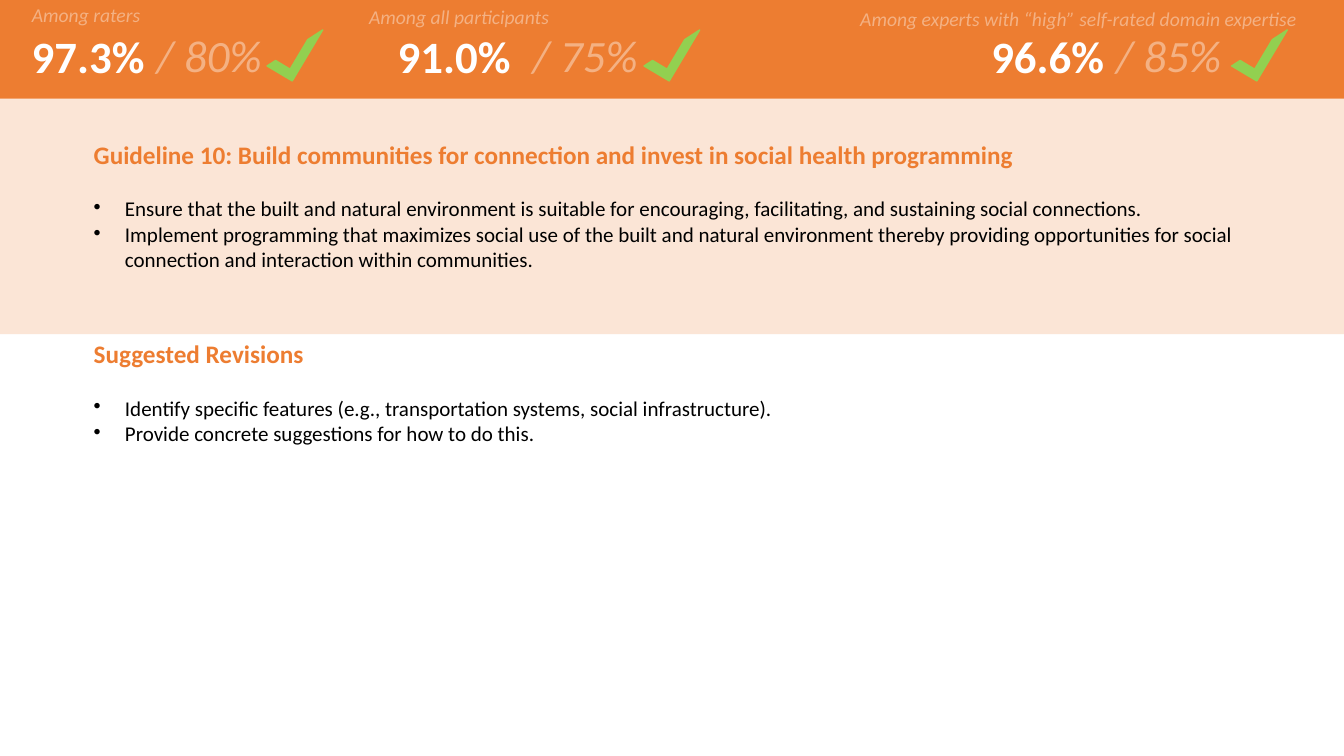
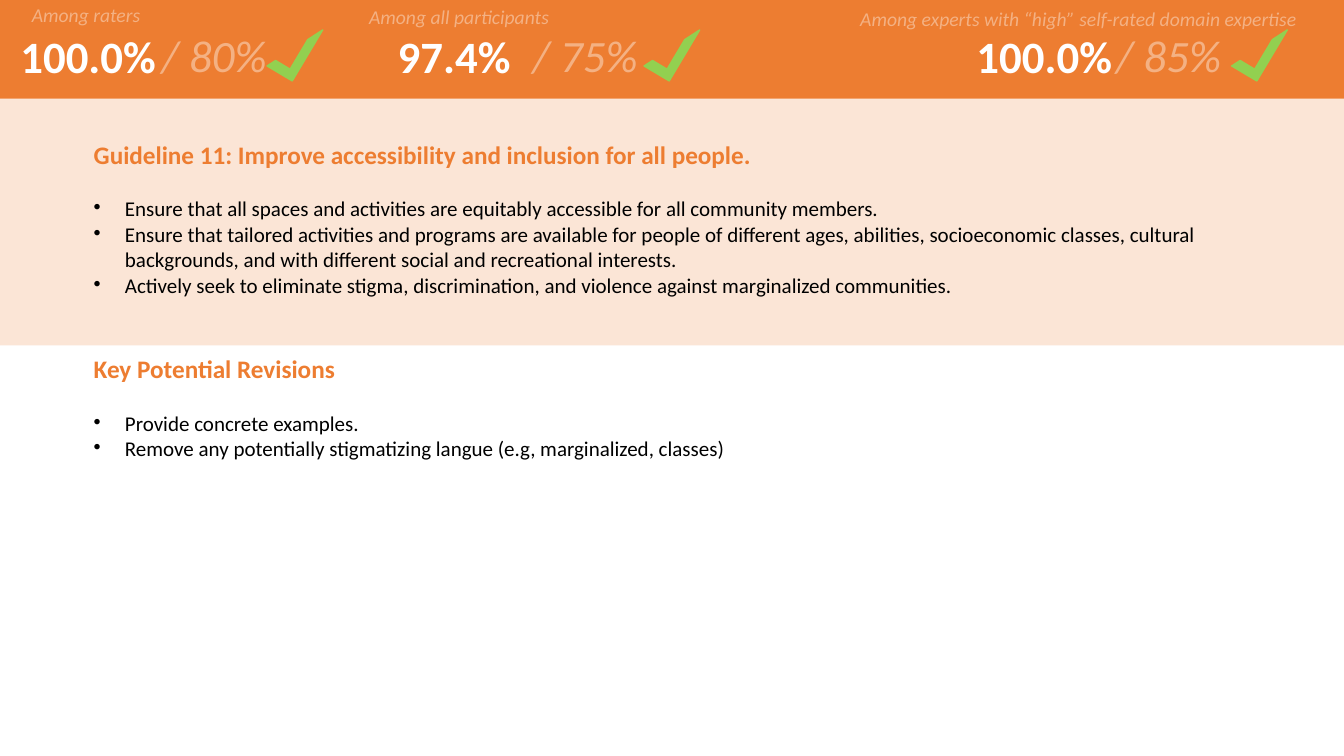
from lxml import etree
from pptx import Presentation
from pptx import util as u
from pptx.dml import color
from pptx.enum import shapes, text
from pptx.oxml import ns

COLORS = {
    "orange": "ED7D31",
    "peach": "FBE5D6",
    "apricot": "F4B183",
    "green": "92D050",
    "white": "FFFFFF",
    "black": "000000",
}

BAND_HEIGHT = 13.07
PANEL_TOP = 13

MEASURES = [
    {"label": "Among raters", "center": 6.41, "top": -0.27, "width": 9.7,
     "target": "/ 80%", "check": 21.94},
    {"label": "Among all participants", "center": 34.16, "top": 0, "width": 15.1,
     "target": "/ 75%", "check": 49.99},
    {"label": "Among experts with “high” self-rated domain expertise",
     "center": 80.25, "top": 0.27, "width": 35.1,
     "target": "/ 85%", "check": 93.71},
]

GUIDELINES = [
    {
        "heading": "Guideline 10: Build communities for connection and invest in "
                   "social health programming",
        "actions": [
            "Ensure that the built and natural environment is suitable for encouraging, "
            "facilitating, and sustaining social connections.",
            "Implement programming that maximizes social use of the built and natural "
            "environment thereby providing opportunities for social connection and "
            "interaction within communities.",
        ],
        "revision_heading": "Suggested Revisions",
        "revisions": [
            "Identify specific features (e.g., transportation systems, social infrastructure).",
            "Provide concrete suggestions for how to do this.",
        ],
        "scores": ["97.3%", "91.0%", "96.6%"],
        "score_centers": [6.56, 33.79, 77.96],
        "target_centers": [15.56, 43.54, 86.96],
        "panel_height": 31.2,
        "revision_top": 44.8,
    },
    {
        "heading": "Guideline 11: Improve accessibility and inclusion for all people.",
        "actions": [
            "Ensure that all spaces and activities are equitably accessible for all "
            "community members.",
            "Ensure that tailored activities and programs are available for people of "
            "different ages, abilities, socioeconomic classes, cultural backgrounds, and "
            "with different social and recreational interests.",
            "Actively seek to eliminate stigma, discrimination, and violence against "
            "marginalized communities.",
        ],
        "revision_heading": "Key Potential Revisions",
        "revisions": [
            "Provide concrete examples.",
            "Remove any potentially stigmatizing langue (e.g, marginalized, classes)",
        ],
        "scores": ["100.0%", "97.4%", "100.0%"],
        "score_centers": [6.56, 33.79, 77.7],
        "target_centers": [15.94, 43.54, 86.96],
        "panel_height": 32.7,
        "revision_top": 46.8,
    },
]


class Deck:
    """Hold the shared style and current slide; lengths are percent of the slide size."""

    font = "Calibri"

    def __init__(self):
        self.presentation = Presentation()
        self.presentation.slide_width = u.Inches(13.33)
        self.presentation.slide_height = u.Inches(7.5)
        self.slide = None

    def add_slide(self):
        self.slide = self.presentation.slides.add_slide(self.presentation.slide_layouts[6])

    def area(self, left, top, width, height):
        across = self.presentation.slide_width / 100
        down = self.presentation.slide_height / 100
        return [u.Emu(round(length)) for length in
                (left * across, top * down, width * across, height * down)]

    def paint(self, fill, name):
        fill.solid()
        fill.fore_color.rgb = color.RGBColor.from_string(COLORS[name])

    def run(self, paragraph, words, size, name, bold=False, italic=False):
        run = paragraph.add_run()
        run.text = words
        font = run.font
        font.name, font.size, font.bold, font.italic = self.font, u.Pt(size), bold, italic
        self.paint(font.fill, name)

    def band(self, top, height, name):
        shape = self.slide.shapes.add_shape(
            shapes.MSO_SHAPE.RECTANGLE, *self.area(0, top, 100, height))
        shape.shadow.inherit = False
        self.paint(shape.fill, name)
        shape.line.fill.background()

    def check(self, center):
        width = 2.18
        shape = self.slide.shapes.add_shape(
            shapes.MSO_SHAPE.HALF_FRAME, *self.area(center - width / 2, 2.4, width, 7.87))
        shape.adjustments[0], shape.adjustments[1] = 0.31, 0.27
        shape.rotation = 210.8
        shape.shadow.inherit = False
        self.paint(shape.fill, "green")
        self.paint(shape.line.fill, "green")
        shape.line.width = u.Pt(1)

    def caption(self, words, center, top, width, height, size, name, **style):
        shape = self.slide.shapes.add_textbox(
            *self.area(center - width / 2, top, width, height))
        frame = shape.text_frame
        frame.word_wrap = False
        frame.auto_size = text.MSO_AUTO_SIZE.SHAPE_TO_FIT_TEXT
        paragraph = frame.paragraphs[0]
        paragraph.alignment = text.PP_ALIGN.CENTER
        self.run(paragraph, words, size, name, **style)

    def bullet(self, paragraph):
        properties = paragraph._p.get_or_add_pPr()
        indent = u.Inches(0.31)
        properties.set("marL", str(indent))
        properties.set("indent", str(-indent))
        etree.SubElement(properties, ns.qn("a:buChar")).set("char", "•")

    def clear_borders(self, cell):
        properties = cell._tc.get_or_add_tcPr()
        for side in ("L", "R", "T", "B"):
            border = etree.SubElement(properties, ns.qn(f"a:ln{side}"))
            etree.SubElement(border, ns.qn("a:noFill"))

    def points(self, heading, items, top, fill=None):
        table = self.slide.shapes.add_table(1, 1, *self.area(6.9, top, 86.25, 13.6)).table
        table.first_row = table.horz_banding = False
        cell = table.cell(0, 0)
        self.clear_borders(cell)
        if fill:
            self.paint(cell.fill, fill)
        else:
            cell.fill.background()
        cell.vertical_anchor = text.MSO_ANCHOR.MIDDLE
        cell.margin_left = cell.margin_right = u.Inches(0.01)
        cell.margin_top = cell.margin_bottom = u.Inches(0.01)
        paragraph = cell.text_frame.paragraphs[0]
        paragraph.space_after = u.Pt(18.3)
        self.run(paragraph, heading, 18, "orange", bold=True)
        for item in items:
            paragraph = cell.text_frame.add_paragraph()
            self.bullet(paragraph)
            self.run(paragraph, item, 15, "black")

    def measure(self, measure, score, score_center, target_center):
        self.caption(score, score_center, 3.2, 1.7 * len(score) + 2, 8.53,
                     32, "white", bold=True)
        self.caption(measure["label"], measure["center"], measure["top"],
                     measure["width"], 4.53, 14, "apricot", italic=True)
        self.caption(measure["target"], target_center, 3.07, 9.4, 8.53,
                     32, "apricot", italic=True)
        self.check(measure["check"])

    def guideline(self, guideline):
        self.add_slide()
        self.band(PANEL_TOP, guideline["panel_height"], "peach")
        self.points(guideline["heading"], guideline["actions"], 18.4, "peach")
        self.band(0, BAND_HEIGHT, "orange")
        for values in zip(MEASURES, guideline["scores"],
                          guideline["score_centers"], guideline["target_centers"]):
            self.measure(*values)
        self.points(guideline["revision_heading"], guideline["revisions"],
                    guideline["revision_top"])


def main():
    deck = Deck()
    for guideline in GUIDELINES:
        deck.guideline(guideline)
    deck.presentation.save("out.pptx")


if __name__ == "__main__":
    main()
